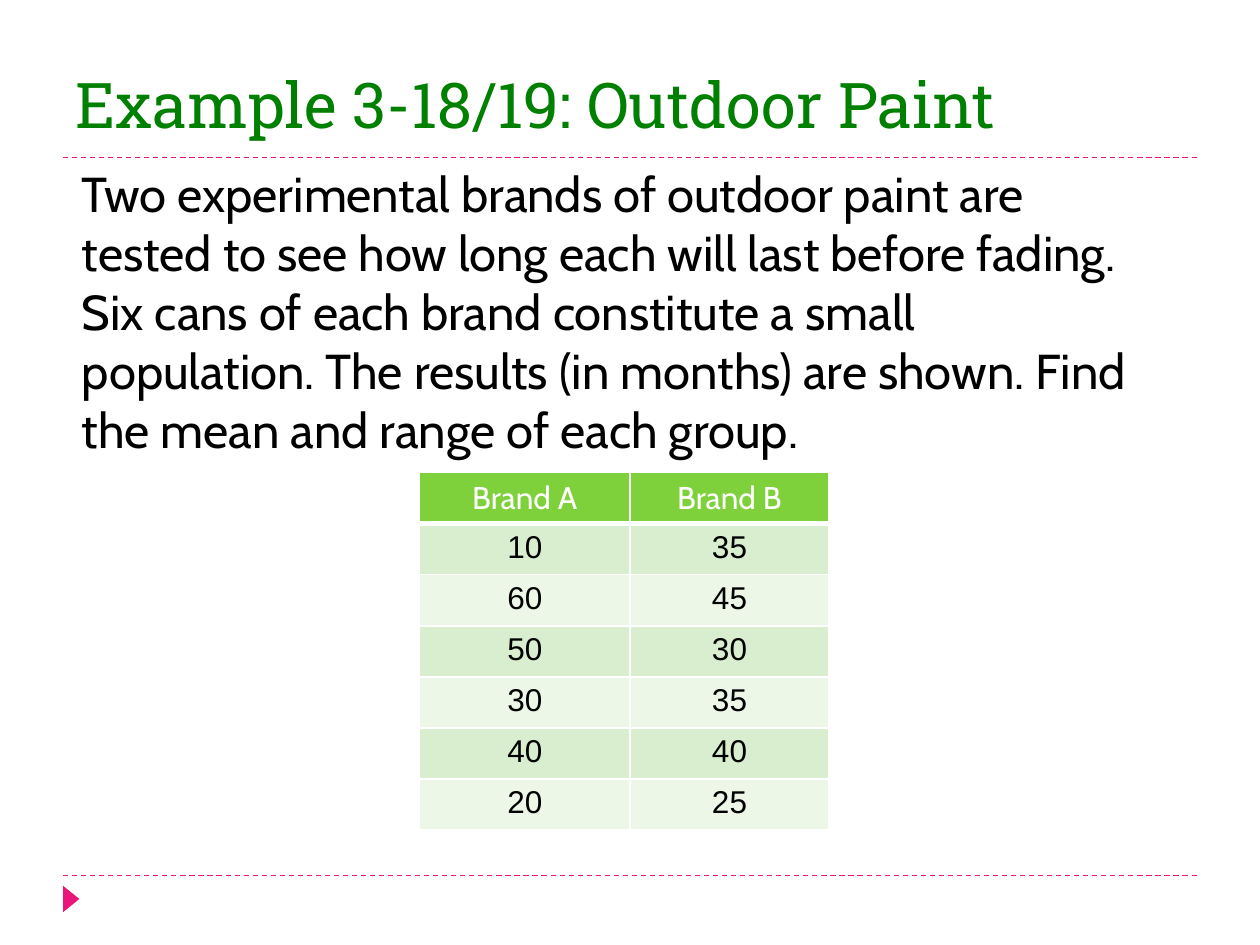
import dataclasses

import lxml.etree
import pptx
import pptx.dml.color
import pptx.enum.dml
import pptx.enum.shapes
import pptx.enum.text
import pptx.oxml.ns
import pptx.util

Inches = pptx.util.Inches
Pt = pptx.util.Pt
qn = pptx.oxml.ns.qn


@dataclasses.dataclass(frozen=True)
class Theme:
    title_font: str = "Roboto Slab"
    text_font: str = "Cabin"
    digit_font: str = "Arial"
    title_size: int = 36
    body_size: int = 28
    table_size: int = 18
    title: str = "008000"
    text: str = "000000"
    white: str = "FFFFFF"
    accent: str = "EA157A"
    header: str = "7FD13B"
    bands: tuple = ("D8EECE", "ECF7E8")


def rgb(value):
    return pptx.dml.color.RGBColor.from_string(value)


class SlideBuilder:
    def __init__(self, slide, theme):
        self.slide = slide
        self.theme = theme

    def style_run(self, p, font, size, color):
        r = p.runs[0]
        r.font.name = font
        r.font.size = Pt(size)
        r.font.bold = False
        r.font.color.rgb = rgb(color)
        return r

    def place(self, sp, box, text, anchor):
        """Move a placeholder, fill it and return its only paragraph."""
        sp.left, sp.top, sp.width, sp.height = map(Inches, box)
        tf = sp.text_frame
        tf.text = text
        tf.word_wrap = True
        tf.auto_size = pptx.enum.text.MSO_AUTO_SIZE.NONE
        tf.vertical_anchor = anchor
        p = tf.paragraphs[0]
        p.alignment = pptx.enum.text.PP_ALIGN.LEFT
        return p

    def title(self, text, box):
        p = self.place(self.slide.shapes.title, box, text,
                       pptx.enum.text.MSO_ANCHOR.BOTTOM)
        self.style_run(p, self.theme.title_font, self.theme.title_size, self.theme.title)

    def body(self, text, box):
        p = self.place(self.slide.placeholders[1], box, text,
                       pptx.enum.text.MSO_ANCHOR.TOP)
        p.space_before = Pt(6)
        pPr = p._p.get_or_add_pPr()
        pPr.set("marL", "0")
        pPr.set("indent", "0")
        lxml.etree.SubElement(pPr, qn("a:buNone"))
        self.style_run(p, self.theme.text_font, self.theme.body_size, self.theme.text)

    def dashed_rule(self, y, left=0.5, right=9.5):
        line = self.slide.shapes.add_connector(
            pptx.enum.shapes.MSO_CONNECTOR.STRAIGHT,
            Inches(left), Inches(y), Inches(right), Inches(y))
        line.line.color.rgb = rgb(self.theme.accent)
        line.line.width = Pt(0.75)
        line.line.dash_style = pptx.enum.dml.MSO_LINE.DASH
        lxml.etree.SubElement(line._element.spPr, qn("a:effectLst"))

    def marker(self, box):
        sp = self.slide.shapes.add_shape(
            pptx.enum.shapes.MSO_SHAPE.ISOSCELES_TRIANGLE, *map(Inches, box))
        sp.rotation = 90
        sp.shadow.inherit = False
        sp.fill.solid()
        sp.fill.fore_color.rgb = rgb(self.theme.accent)
        sp.line.fill.background()

    def cell_borders(self, cell, bottom):
        tcPr = cell._tc.get_or_add_tcPr()
        for side, width in (("L", 1), ("R", 1), ("T", 1), ("B", bottom)):
            ln = lxml.etree.SubElement(tcPr, qn(f"a:ln{side}"), w=str(Pt(width)))
            fill = lxml.etree.SubElement(ln, qn("a:solidFill"))
            lxml.etree.SubElement(fill, qn("a:srgbClr"), val=self.theme.white)

    def table(self, rows, box, widths):
        t = self.theme
        table = self.slide.shapes.add_table(
            len(rows), len(widths), *map(Inches, box)).table
        for column, width in zip(table.columns, widths):
            column.width = Inches(width)
        for i, row in enumerate(rows):
            is_header = i == 0
            for j, value in enumerate(row):
                cell = table.cell(i, j)
                self.cell_borders(cell, bottom=3 if is_header else 1)
                cell.fill.solid()
                cell.fill.fore_color.rgb = rgb(t.header if is_header else t.bands[(i - 1) % 2])
                cell.text_frame.text = str(value)
                p = cell.text_frame.paragraphs[0]
                p.alignment = pptx.enum.text.PP_ALIGN.CENTER
                p._p.get_or_add_pPr().set("rtl", "1")
                r = self.style_run(p, t.text_font, t.table_size,
                                   t.white if is_header else t.text)
                # Digits in right-to-left paragraphs use the complex-script font.
                lxml.etree.SubElement(r._r.get_or_add_rPr(), qn("a:cs"),
                                      typeface=t.digit_font)


def main():
    prs = pptx.Presentation()
    prs.slide_width, prs.slide_height = Inches(10), Inches(7.5)
    s = SlideBuilder(prs.slides.add_slide(prs.slide_layouts[1]), Theme())

    for y in (6.95, 1.25):
        s.dashed_rule(y)
    s.marker((0.46, 7.07, 0.21, 0.13))
    s.title("Example 3-18/19: Outdoor Paint", (0.5, 0.42, 9, 0.75))
    s.body(
        "Two experimental brands of outdoor paint are tested to see how long each "
        "will last before fading. Six cans of each brand constitute a small "
        "population. The results (in months) are shown. Find the mean and range "
        "of each group.",
        (0.55, 1.25, 8.58, 2.5))

    brand_a = (10, 60, 50, 30, 40, 20)
    brand_b = (35, 45, 30, 35, 40, 25)
    s.table([("Brand A", "Brand B"), *zip(brand_a, brand_b)],
            (3.33, 3.75, 3.25, 2.84), (1.67, 1.58))
    prs.save("out.pptx")


if __name__ == "__main__":
    main()
